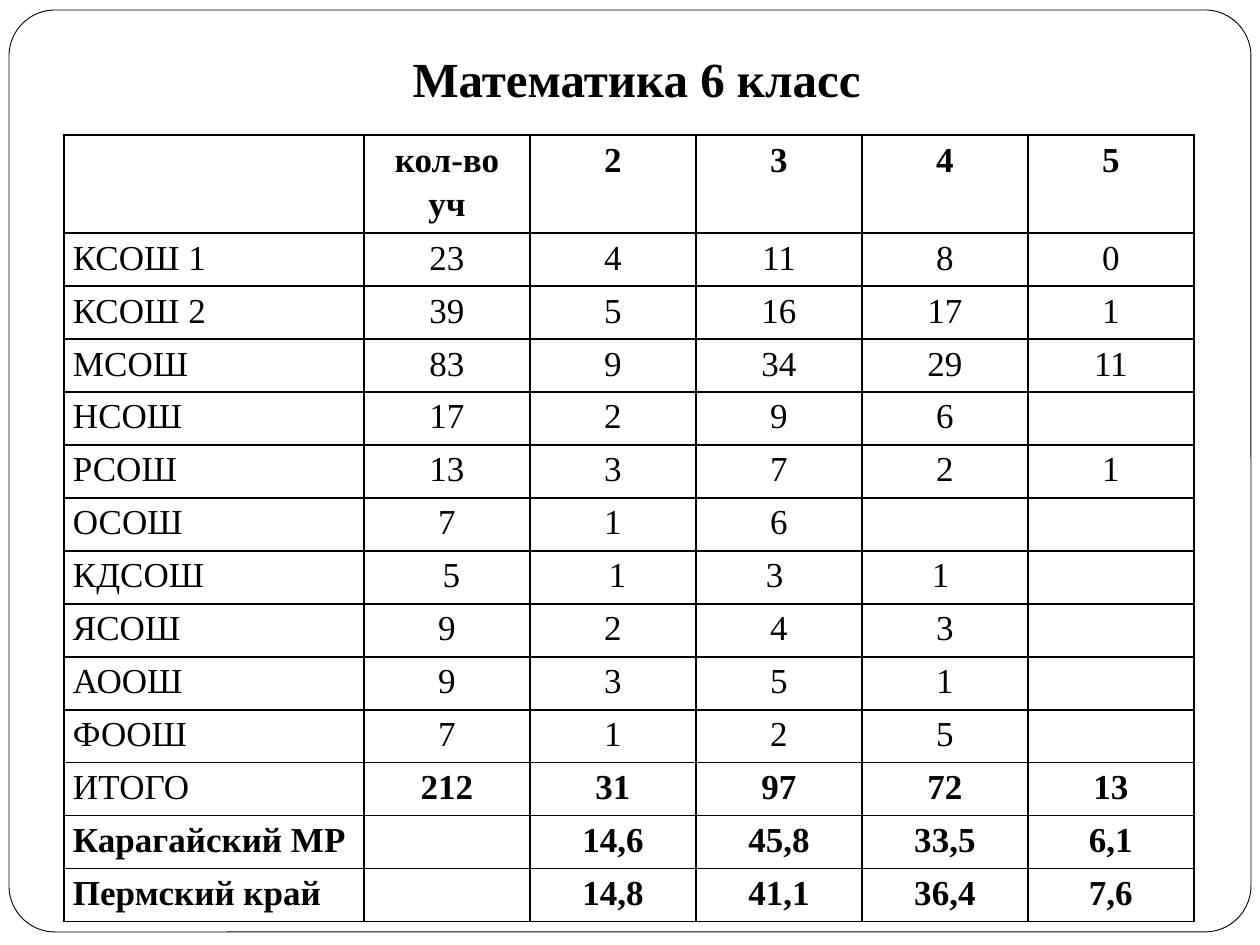
from lxml import etree
from pptx import Presentation
from pptx import util as u
from pptx.dml import color
from pptx.enum import shapes, text
from pptx.oxml import ns

TITLE = "Математика 6 класс"
HEADER = ["", "кол-во уч", "2", "3", "4", "5"]
SCHOOLS = [
    ["КСОШ 1", "23", "4", "11", "8", "0"],
    ["КСОШ 2", "39", "5", "16", "17", "1"],
    ["МСОШ", "83", "9", "34", "29", "11"],
    ["НСОШ", "17", "2", "9", "6", ""],
    ["РСОШ", "13", "3", "7", "2", "1"],
    ["ОСОШ", "7", "1", "6", "", ""],
    ["КДСОШ", " 5", " 1", "3 ", "1 ", ""],
    ["ЯСОШ", "9", "2", "4", "3", ""],
    ["АООШ", "9", "3", "5", "1", ""],
    ["ФООШ", "7", "1", "2", "5", ""],
]
TOTAL = ["ИТОГО", "212", "31", "97", "72", "13"]
REGIONS = [
    ["Карагайский МР", "", "14,6", "45,8", "33,5", "6,1"],
    ["Пермский край", "", "14,8", "41,1", "36,4", "7,6"],
]
ROWS = [HEADER, *SCHOOLS, TOTAL, *REGIONS]
BOLD_ROWS = [HEADER, TOTAL, *REGIONS]

COLORS = {"ink": "000000", "paper": "FFFFFF"}
FONT = "Times New Roman"
SLIDE_SIZE = (1260, 945)
FRAME_BOX = (9, 10, 1242, 922)
TITLE_BOX = (150, 42, 973, 72)
TABLE_LEFT, TABLE_TOP = 64, 135
COLUMN_WIDTHS = [300] + [166] * 5
ROW_HEIGHTS = [98] + [53] * 13
CELL_INSET = 9


def px(value):
    return u.Emu(round(value * 914400 / 126))


def rgb(name):
    return color.RGBColor.from_string(COLORS[name])


def format_paragraph(paragraph, size, bold, alignment):
    paragraph.alignment = alignment
    paragraph.font.name = FONT
    paragraph.font.size = u.Pt(size)
    paragraph.font.bold = bold
    paragraph.font.color.rgb = rgb("ink")


def add_borders(cell):
    properties = cell._tc.get_or_add_tcPr()
    for position, side in enumerate(("lnL", "lnR", "lnT", "lnB")):
        line = etree.Element(ns.qn(f"a:{side}"), w=str(u.Pt(1)))
        fill = etree.SubElement(line, ns.qn("a:solidFill"))
        etree.SubElement(fill, ns.qn("a:srgbClr"), val=COLORS["ink"])
        properties.insert(position, line)


def add_frame(slide):
    frame = slide.shapes.add_shape(
        shapes.MSO_SHAPE.ROUNDED_RECTANGLE, *map(px, FRAME_BOX))
    frame.adjustments[0] = 0.05
    frame.shadow.inherit = False
    frame.fill.solid()
    frame.fill.fore_color.rgb = rgb("paper")
    frame.line.color.rgb = rgb("ink")
    frame.line.width = u.Pt(0.5)
    slide.shapes._spTree.insert(2, frame._element)


def fill_title(slide):
    title = slide.shapes.title
    title.left, title.top, title.width, title.height = map(px, TITLE_BOX)
    title.text_frame.text = TITLE
    title.text_frame.vertical_anchor = text.MSO_ANCHOR.MIDDLE
    title.text_frame.auto_size = text.MSO_AUTO_SIZE.SHAPE_TO_FIT_TEXT
    format_paragraph(title.text_frame.paragraphs[0], 28, True, text.PP_ALIGN.CENTER)


def add_results(slide):
    table = slide.shapes.add_table(
        len(ROWS), len(HEADER), px(TABLE_LEFT), px(TABLE_TOP),
        px(sum(COLUMN_WIDTHS)), px(sum(ROW_HEIGHTS))).table
    table.first_row = table.horz_banding = False
    for column, width in zip(table.columns, COLUMN_WIDTHS):
        column.width = px(width)
    for row, height, values in zip(table.rows, ROW_HEIGHTS, ROWS):
        row.height = px(height)
        for index, (cell, value) in enumerate(zip(row.cells, values)):
            cell.text = value
            cell.margin_left = cell.margin_right = px(CELL_INSET)
            cell.margin_top = cell.margin_bottom = 0
            cell.fill.solid()
            cell.fill.fore_color.rgb = rgb("paper")
            add_borders(cell)
            bold = values in BOLD_ROWS and not (values is TOTAL and index == 0)
            alignment = text.PP_ALIGN.CENTER if index else text.PP_ALIGN.LEFT
            paragraph = cell.text_frame.paragraphs[0]
            paragraph.line_spacing = 1.15
            format_paragraph(paragraph, 20, bold, alignment)


def main():
    presentation = Presentation()
    presentation.slide_width, presentation.slide_height = map(px, SLIDE_SIZE)
    slide = presentation.slides.add_slide(presentation.slide_layouts[5])
    add_frame(slide)
    fill_title(slide)
    add_results(slide)
    presentation.save("out.pptx")


if __name__ == "__main__":
    main()
